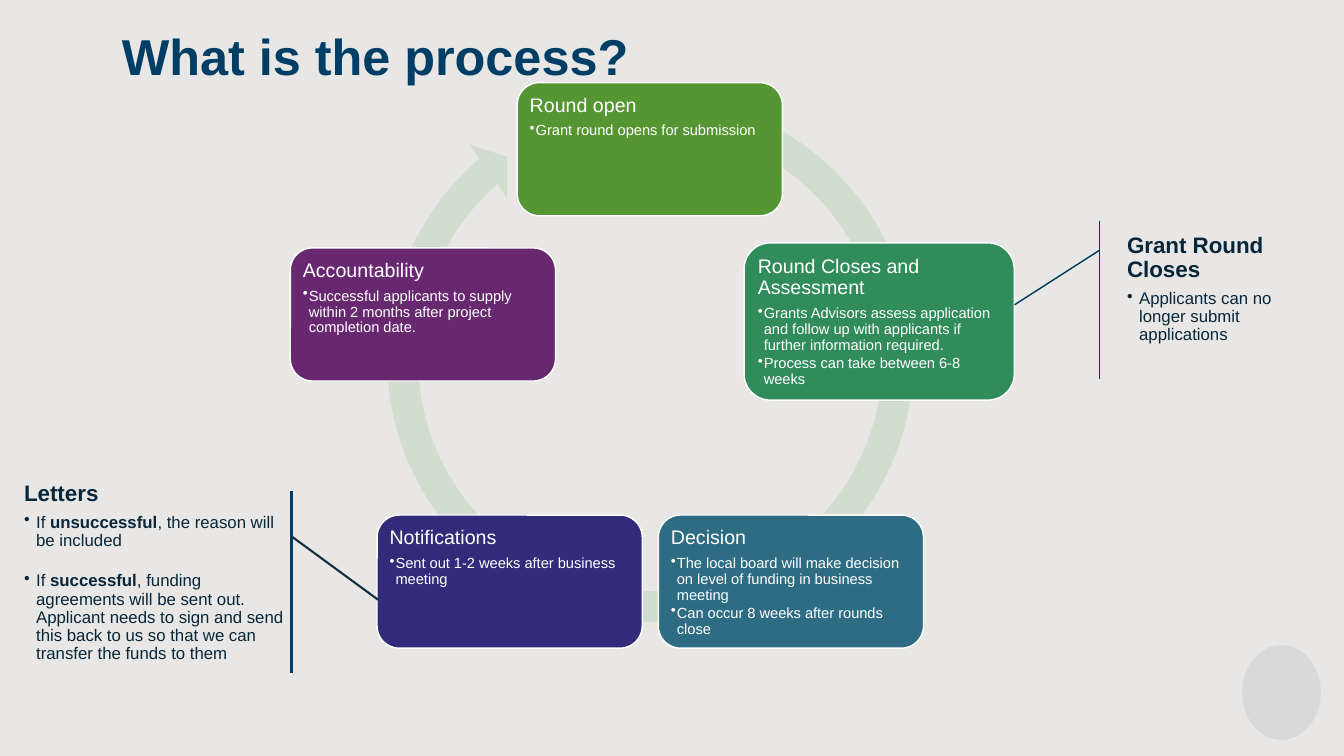
"""Build a slide that shows the grant round process as a cycle of five stages."""
from lxml import etree
from pptx import Presentation, util as u
from pptx.dml.color import RGBColor
from pptx.enum import shapes, text
from pptx.oxml import ns

COLOURS = {
    "background": "E8E7E5", "title": "003E66", "ring": "D1DDCE", "emblem": "D9D9D9",
    "white": "FFFFFF", "note": "082639", "callout": "003A58", "link": "143041",
    "open": "569632", "assess": "308C5A", "decide": "2D6C83",
    "notify": "312B79", "account": "682870",
}
STAGE_SIZE = (263, 132)
STAGES = [
    ("open", (513, 82, *STAGE_SIZE), "Round open", ["Grant round opens for submission"]),
    ("assess", (738, 241, 268, 156), "Round Closes and Assessment",
     ["Grants Advisors assess application and follow up with applicants if "
      "further information required.",
      "Process can take between 6-8 weeks"]),
    ("decide", (653, 511, *STAGE_SIZE), "Decision",
     ["The local board will make decision on level of funding in business meeting",
      "Can occur 8 weeks after rounds close"]),
    ("notify", (374, 511, *STAGE_SIZE), "Notifications",
     ["Sent out 1-2 weeks after business meeting"]),
    ("account", (288, 246, *STAGE_SIZE), "Accountability",
     ["Successful applicants to supply within 2 months after project completion date."]),
]
LETTERS = [
    [("If ", False), ("unsuccessful", True), (", the reason will be included", False)],
    [("If ", False), ("successful", True),
     (", funding agreements will be sent out. Applicant needs to sign and send "
      "this back to us so that we can transfer the funds to them", False)],
]


def px(length):
    """Turn px, at 100 to the inch, into EMU."""
    return u.Emu(length * 9144)


def colour(name):
    """Look up a named colour."""
    return RGBColor.from_string(COLOURS[name])


def write(frame, content, *, size, color, bold=False, after=0, indent=0):
    """Add a paragraph given as a string or as (text, bold) runs; an indent gives a bullet."""
    paragraph = frame.paragraphs[0]
    if paragraph.runs:
        paragraph = frame.add_paragraph()
    paragraph.alignment = text.PP_ALIGN.LEFT
    paragraph.line_spacing = 0.9
    paragraph.space_after = u.Pt(after)
    if indent:
        properties = paragraph._p.get_or_add_pPr()
        properties.set("marL", str(px(indent)))
        properties.set("indent", str(px(-indent)))
        etree.SubElement(properties, ns.qn("a:buChar"), char="•")
    runs = [(content, bold)] if isinstance(content, str) else content
    for words, strong in runs:
        run = paragraph.add_run()
        run.text = words
        run.font.name = "Arial"
        run.font.size = u.Pt(size)
        run.font.bold = strong
        run.font.color.rgb = colour(color)


class ProcessSlide:
    """Holds the slide and draws each kind of element on it."""

    def __init__(self, presentation):
        """Add a blank slide with the background colour."""
        self.slide = presentation.slides.add_slide(presentation.slide_layouts[6])
        self.slide.background.fill.solid()
        self.slide.background.fill.fore_color.rgb = colour("background")

    def shape(self, kind, box, fill, line=None, adjustments=()):
        """Draw a filled preset shape."""
        shape = self.slide.shapes.add_shape(kind, *map(px, box))
        shape.shadow.inherit = False
        shape.fill.solid()
        shape.fill.fore_color.rgb = colour(fill)
        if line:
            shape.line.color.rgb = colour(line)
            shape.line.width = u.Pt(1)
        else:
            shape.line.fill.background()
        for index, value in enumerate(adjustments):
            shape.adjustments[index] = value
        return shape

    def frame(self, shape, sides=10, top=5):
        """Prepare a wrapped text frame anchored at the top."""
        frame = shape.text_frame
        frame.word_wrap = True
        frame.vertical_anchor = text.MSO_ANCHOR.TOP
        frame.margin_left = frame.margin_right = px(sides)
        frame.margin_top = frame.margin_bottom = px(top)
        return frame

    def text_box(self, box):
        """Add a text box and return its frame."""
        return self.frame(self.slide.shapes.add_textbox(*map(px, box)))

    def stage(self, fill, box, heading, points):
        """Draw one stage of the cycle."""
        card = self.shape(shapes.MSO_SHAPE.ROUNDED_RECTANGLE, box, fill, "white")
        frame = self.frame(card, sides=6, top=6)
        write(frame, heading, size=14, color="white", after=4.9)
        for point in points:
            write(frame, point, size=10.5, color="white", after=1.6, indent=6)

    def note(self, frame, heading, points, gap=1.8):
        """Write a bold heading with bullets below it."""
        write(frame, heading, size=16, color="note", bold=True, after=5.6)
        for point in points:
            write(frame, point, size=12, color="note", after=gap, indent=12)

    def line(self, start, end, color, width):
        """Draw a straight line."""
        connector = self.slide.shapes.add_connector(
            shapes.MSO_CONNECTOR.STRAIGHT, *map(px, start + end))
        connector.line.color.rgb = colour(color)
        connector.line.width = u.Pt(width)
        etree.SubElement(connector._element.spPr, ns.qn("a:effectLst"))


def main():
    """Build and save the presentation."""
    presentation = Presentation()
    presentation.slide_width, presentation.slide_height = px(1333), px(750)
    process = ProcessSlide(presentation)
    process.shape(shapes.MSO_SHAPE.OVAL, (1232, 640, 78, 94), "emblem")
    write(process.text_box((111, 27, 650, 93)), "What is the process?",
          size=36, color="title", bold=True)
    process.shape(shapes.MSO_SHAPE.CIRCULAR_ARROW, (367, 78, 556, 556), "ring",
                  adjustments=(0.055, 3.307, 137.514, 174.009, 0.058))
    for stage in STAGES:
        process.stage(*stage)
    callout = process.shape(shapes.MSO_SHAPE.LINE_CALLOUT_1_ACCENT_BAR,
                            (1108, 219, 214, 157), "background", "callout",
                            adjustments=(0.188, -0.083, 0.531, -0.475))
    process.note(process.frame(callout, top=13), "Grant Round Closes",
                 ["Applicants can no longer submit applications"])
    process.note(process.text_box((14, 473, 283, 195)), "Letters", LETTERS, gap=16)
    process.line((289, 487), (289, 668), "title", 2.25)
    process.line((289, 532), (375, 595), "link", 1.5)
    presentation.save("out.pptx")


if __name__ == "__main__":
    main()
